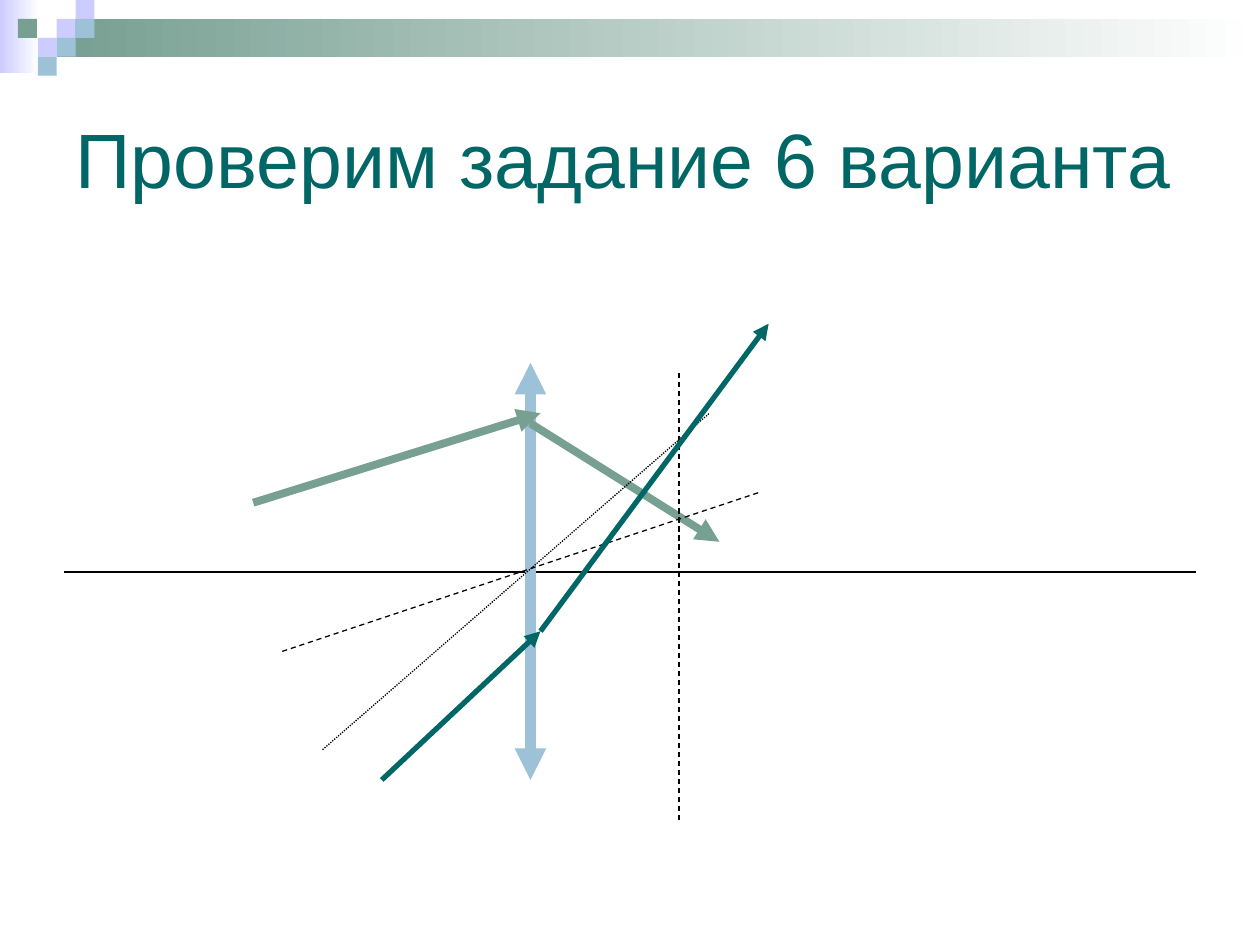
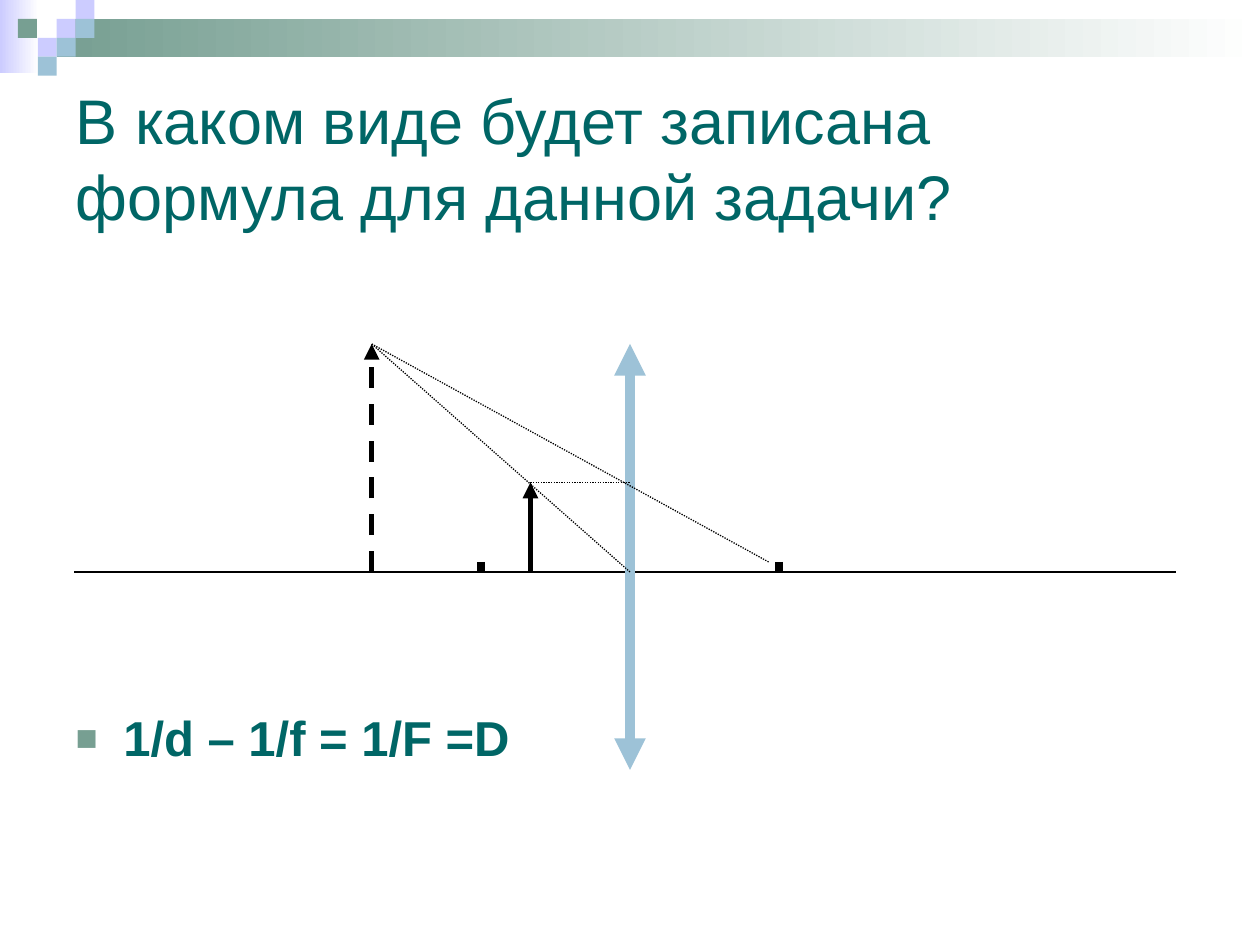
from lxml import etree
from pptx import Presentation
from pptx.dml.color import RGBColor
from pptx.enum import dml, shapes, text
from pptx.oxml import ns
from pptx.util import Inches, Pt

FONT = "Arial"
TEAL, SAGE, SKY, LILAC = "006666", "779F92", "9DC2D7", "CCCCFF"
BLACK, WHITE = "000000", "FFFFFF"
DASH, DOT = dml.MSO_LINE.DASH, dml.MSO_LINE.ROUND_DOT
TILE = 0.15
FOCUS = 1.18  # distance from the lens to its focus, in inches


def color(value):
    return RGBColor.from_string(value)


def add_child(parent, tag, **attributes):
    return etree.SubElement(parent, ns.qn(tag), attributes)


def add_rectangle(slide, box, fill, fade_to=None):
    shape = slide.shapes.add_shape(
        shapes.MSO_SHAPE.RECTANGLE, *(Inches(length) for length in box))
    shape.shadow.inherit = False
    shape.line.fill.background()
    if fade_to is None:
        shape.fill.solid()
        shape.fill.fore_color.rgb = color(fill)
        return
    shape.fill.gradient()
    shape.fill.gradient_angle = 0
    for stop, position, stop_color in zip(
            shape.fill.gradient_stops, (0, 1), (fill, fade_to)):
        stop.position = position
        stop.color.rgb = color(stop_color)


def add_band(slide):
    """Draw the fading strips and the mosaic along the top edge."""
    add_rectangle(slide, (0, 0, 0.31, 0.58), LILAC, WHITE)
    add_rectangle(slide, (0.45, TILE, 9.55, 2 * TILE), SAGE, WHITE)
    tiles = [(3, 1, LILAC), (4, 0, LILAC), (4, 1, SKY), (2, 2, LILAC),
             (0.95, 1, SAGE), (3, 2, SKY), (2, 3, SKY)]
    for column, row, fill in tiles:
        add_rectangle(slide, (column * TILE, row * TILE, TILE, TILE), fill)


def fill_placeholder(placeholder, box, words, size, bold=False):
    placeholder.left, placeholder.top, placeholder.width, placeholder.height = (
        Inches(length) for length in box)
    frame = placeholder.text_frame
    frame.word_wrap = True
    frame.auto_size = text.MSO_AUTO_SIZE.NONE
    frame.vertical_anchor = text.MSO_ANCHOR.MIDDLE
    paragraph = frame.paragraphs[0]
    paragraph.alignment = text.PP_ALIGN.LEFT
    run = paragraph.add_run()
    run.text = words
    run.font.name, run.font.size, run.font.bold = FONT, Pt(size), bold
    run.font.color.rgb = color(TEAL)
    return paragraph


def set_square_bullet(paragraph):
    properties = paragraph._p.get_or_add_pPr()
    properties.set("marL", str(Inches(0.38)))
    properties.set("indent", str(-Inches(0.38)))
    add_child(add_child(properties, "a:buClr"), "a:srgbClr", val=SAGE)
    add_child(properties, "a:buSzPct", val="75000")
    add_child(properties, "a:buFont", typeface=FONT)
    add_child(properties, "a:buChar", char="■")


def start_slide(presentation, layout, title, size):
    slide = presentation.slides.add_slide(presentation.slide_layouts[layout])
    fill_placeholder(slide.shapes.title, (0.5, 0.5, 9, 1.5), title, size)
    add_band(slide)
    return slide


def line_drawer(slide, center):
    """Return a function that draws lines measured from the optical center."""
    def draw(start, end, line_color=BLACK, width=0.75, dash=None, arrows=()):
        ends = [Inches(origin + offset) for point in (start, end)
                for origin, offset in zip(center, point)]
        connector = slide.shapes.add_connector(
            shapes.MSO_CONNECTOR.STRAIGHT, *ends)
        connector.line.color.rgb = color(line_color)
        connector.line.width = Pt(width)
        if dash is not None:
            connector.line.dash_style = dash
        for arrow in arrows:
            add_child(connector.line._get_or_add_ln(), arrow, type="triangle")
        add_child(connector._element.spPr, "a:effectLst")
    return draw


HEAD, TAIL = "a:headEnd", "a:tailEnd"


def draw_refraction(slide, center):
    """Two rays refracted by the lens, with their secondary axes."""
    draw = line_drawer(slide, center)
    draw((-3.7, 0), (5.28, 0))
    draw((0, -1.66), (0, 1.65), SKY, 6, arrows=(HEAD, TAIL))
    upper_rays = [((-2.2, -0.55), (0.08, -1.26)), ((0, -1.18), (1.5, -0.24))]
    lower_rays = [((-1.18, 1.65), (0.08, 0.47)), ((0.08, 0.47), (1.89, -1.97))]
    for ray in upper_rays:
        draw(*ray, SAGE, 4.5, arrows=(TAIL,))
    draw((-1.97, 0.63), (1.81, -0.63), dash=DASH)
    draw((FOCUS, -1.58), (FOCUS, 1.97), dash=DASH)
    draw((-1.65, 1.41), (1.42, -1.26), dash=DOT)
    for ray in lower_rays:
        draw(*ray, TEAL, 3, arrows=(TAIL,))


def draw_virtual_image(slide, center):
    """An object inside the focus and its enlarged virtual image."""
    draw = line_drawer(slide, center)
    object_tip, image_tip = (-0.79, -0.71), (-2.05, -1.81)
    draw((-4.41, 0), (4.33, 0))
    draw((0, -1.81), (0, 1.57), SKY, 6, arrows=(HEAD, TAIL))
    draw((object_tip[0], 0), object_tip, width=3, arrows=(TAIL,))
    for focus in (-FOCUS, FOCUS):
        draw((focus, -0.08), (focus, 0), width=4.5)
    draw((0, 0), image_tip, dash=DOT)
    draw(object_tip, (0, object_tip[1]), dash=DOT)
    draw((1.1, -0.08), image_tip, dash=DOT)
    draw((image_tip[0], 0), image_tip, width=3, dash=DASH, arrows=(TAIL,))


def main():
    presentation = Presentation()
    presentation.slide_width, presentation.slide_height = Inches(10), Inches(7.5)

    slide = start_slide(presentation, 5, "Проверим задание 6 варианта", 44)
    draw_refraction(slide, (4.21, 4.54))

    slide = start_slide(
        presentation, 1,
        "В каком виде будет записана формула для данной задачи?", 36)
    formula = fill_placeholder(slide.placeholders[1], (0.5, 5.58, 4.3, 0.6),
                               "1/d – 1/f = 1/F =D", 28, bold=True)
    formula.line_spacing = 0.9
    formula.space_before = Pt(0)
    set_square_bullet(formula)
    draw_virtual_image(slide, (5, 4.54))

    presentation.save("out.pptx")


if __name__ == "__main__":
    main()
